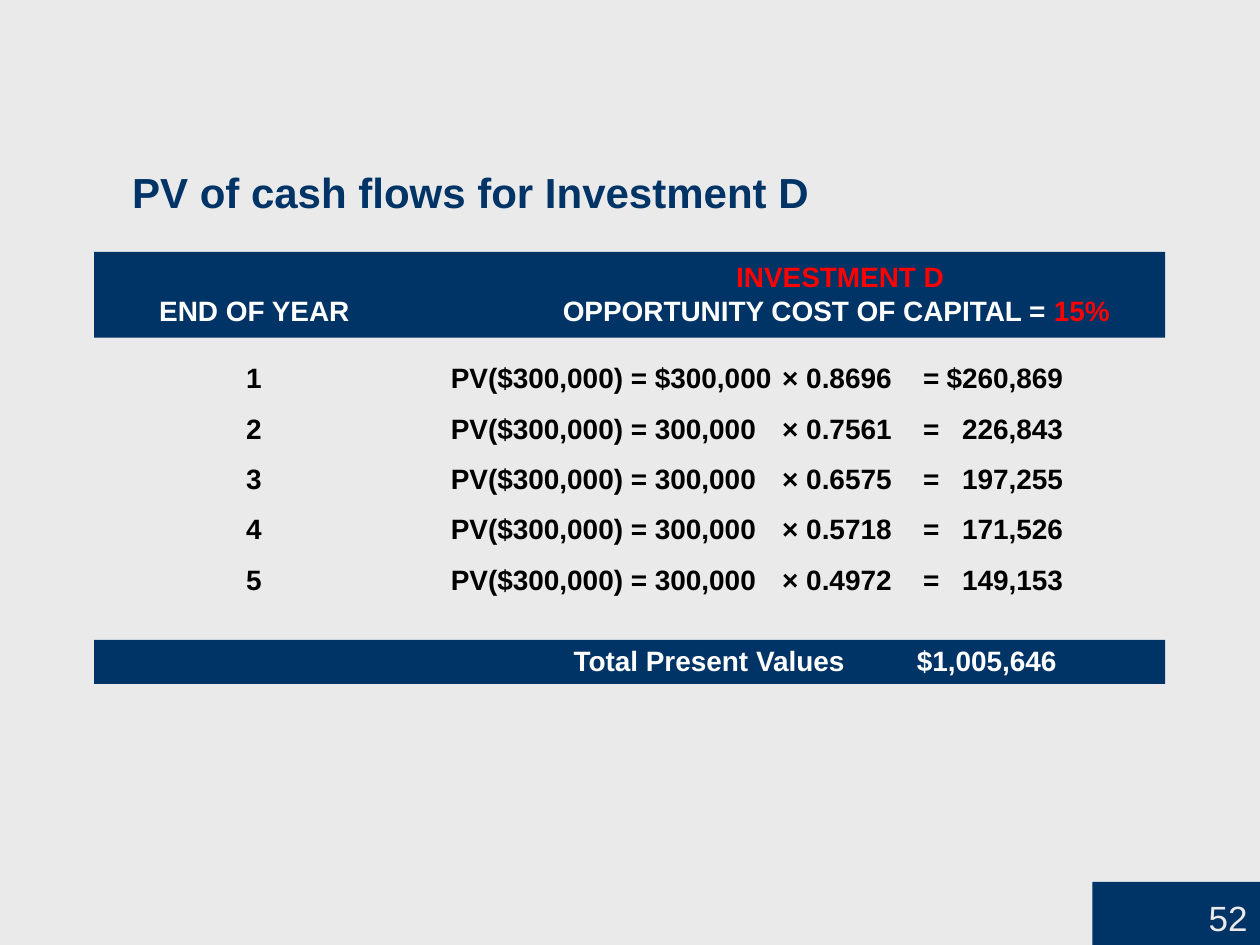
"""Build the slide with the present values of Investment D."""
import pptx
import pptx.dml.color
import pptx.enum.shapes
import pptx.enum.text
import pptx.oxml
import pptx.oxml.ns
import pptx.util

Cm = pptx.util.Cm
NAVY, PALE, WHITE, RED, BLACK = "003366", "EAEAEA", "FFFFFF", "FF0000", "000000"
ANCHOR = pptx.enum.text.MSO_ANCHOR
ALIGN = pptx.enum.text.PP_ALIGN


def color(value):
    return pptx.dml.color.RGBColor.from_string(value)


def apply(target, values):
    for name, value in values.items():
        setattr(target, name, value)


def box(left, top, width, height):
    return {"left": Cm(left), "top": Cm(top), "width": Cm(width), "height": Cm(height)}


class SlideBuilder:
    font = {"name": "Arial", "size": pptx.util.Pt(16), "bold": True}

    def __init__(self, slide):
        self.slide = slide
        self.paint(slide.background, PALE)

    def paint(self, target, fill_color):
        target.fill.solid()
        target.fill.fore_color.rgb = color(fill_color)

    def add_runs(self, paragraph, runs, **font):
        for text, run_color in runs:
            run = paragraph.add_run()
            run.text = text
            apply(run.font, {**self.font, **font})
            run.font.color.rgb = color(run_color)

    def title(self, text, place):
        shape = self.slide.shapes.title
        apply(shape, place)
        apply(shape.text_frame, {"vertical_anchor": ANCHOR.BOTTOM, "word_wrap": True,
                                 "auto_size": pptx.enum.text.MSO_AUTO_SIZE.NONE})
        paragraph = shape.text_frame.paragraphs[0]
        paragraph.alignment = ALIGN.LEFT
        self.add_runs(paragraph, [(text, NAVY)], size=pptx.util.Pt(24))

    def bar(self, place):
        shape = self.slide.shapes.add_shape(
            pptx.enum.shapes.MSO_SHAPE.RECTANGLE, *place.values())
        shape.shadow.inherit = False
        self.paint(shape, NAVY)
        shape.line.fill.background()
        return shape

    def page_number(self, text, place):
        frame = self.bar(place).text_frame
        frame.vertical_anchor = ANCHOR.BOTTOM
        frame.paragraphs[0].alignment = ALIGN.RIGHT
        self.add_runs(frame.paragraphs[0], [(text, PALE)],
                      size=pptx.util.Pt(20), bold=False)

    def tabbed_text(self, lines, tabs, place, line_spacing=1.0):
        frame = self.slide.shapes.add_textbox(*place.values()).text_frame
        frame.word_wrap = True
        for index, runs in enumerate(lines):
            paragraph = frame.add_paragraph() if index else frame.paragraphs[0]
            paragraph.line_spacing = line_spacing
            self.set_tabs(paragraph, tabs)
            self.add_runs(paragraph, runs)

    def set_tabs(self, paragraph, tabs):
        stops = "".join(f'<a:tab pos="{int(Cm(position))}" algn="{align}"/>'
                        for position, align in tabs)
        paragraph._p.get_or_add_pPr().append(pptx.oxml.parse_xml(
            f"<a:tabLst {pptx.oxml.ns.nsdecls('a')}>{stops}</a:tabLst>"))


def main():
    presentation = pptx.Presentation()
    apply(presentation, {"slide_width": Cm(25.4), "slide_height": Cm(19.05)})
    builder = SlideBuilder(presentation.slides.add_slide(presentation.slide_layouts[5]))

    builder.page_number("52", box(22.02, 17.78, 3.38, 1.27))
    builder.title("PV of cash flows for Investment D", box(2.41, 1.88, 22.68, 2.62))

    builder.bar(box(1.9, 5.08, 21.59, 1.73))
    builder.tabbed_text(
        [[("\t\t ", WHITE), ("INVESTMENT D", RED)],
         [("\tEND OF YEAR\tOPPORTUNITY COST OF CAPITAL = ", WHITE), ("15%", RED)]],
        [(3.81, "ctr"), (15.54, "ctr")], box(1.07, 5.11, 22.22, 1.63))

    cash_flows = [
        ("$300,000", "0.8696", "$260,869"),
        ("300,000", "0.7561", "226,843"),
        ("300,000", "0.6575", "197,255"),
        ("300,000", "0.5718", "171,526"),
        ("300,000", "0.4972", "149,153"),
    ]
    rows = [[(f"\t{year}\tPV($300,000) = {amount}\t× {factor}\t=\t{value}", BLACK)]
            for year, (amount, factor, value) in enumerate(cash_flows, start=1)]
    builder.tabbed_text(
        rows, [(4.29, "ctr"), (8.26, "l"), (14.94, "l"), (17.78, "l"), (20.6, "r")],
        box(0.58, 6.81, 23.95, 5.36), line_spacing=1.5)

    builder.bar(box(1.9, 12.9, 21.59, 0.89))
    builder.tabbed_text([[("\tTotal Present Values\t$1,005,646", WHITE)]],
                        [(16.2, "r"), (20.47, "r")], box(0.58, 12.85, 23.95, 0.94))

    presentation.save("out.pptx")


if __name__ == "__main__":
    main()
